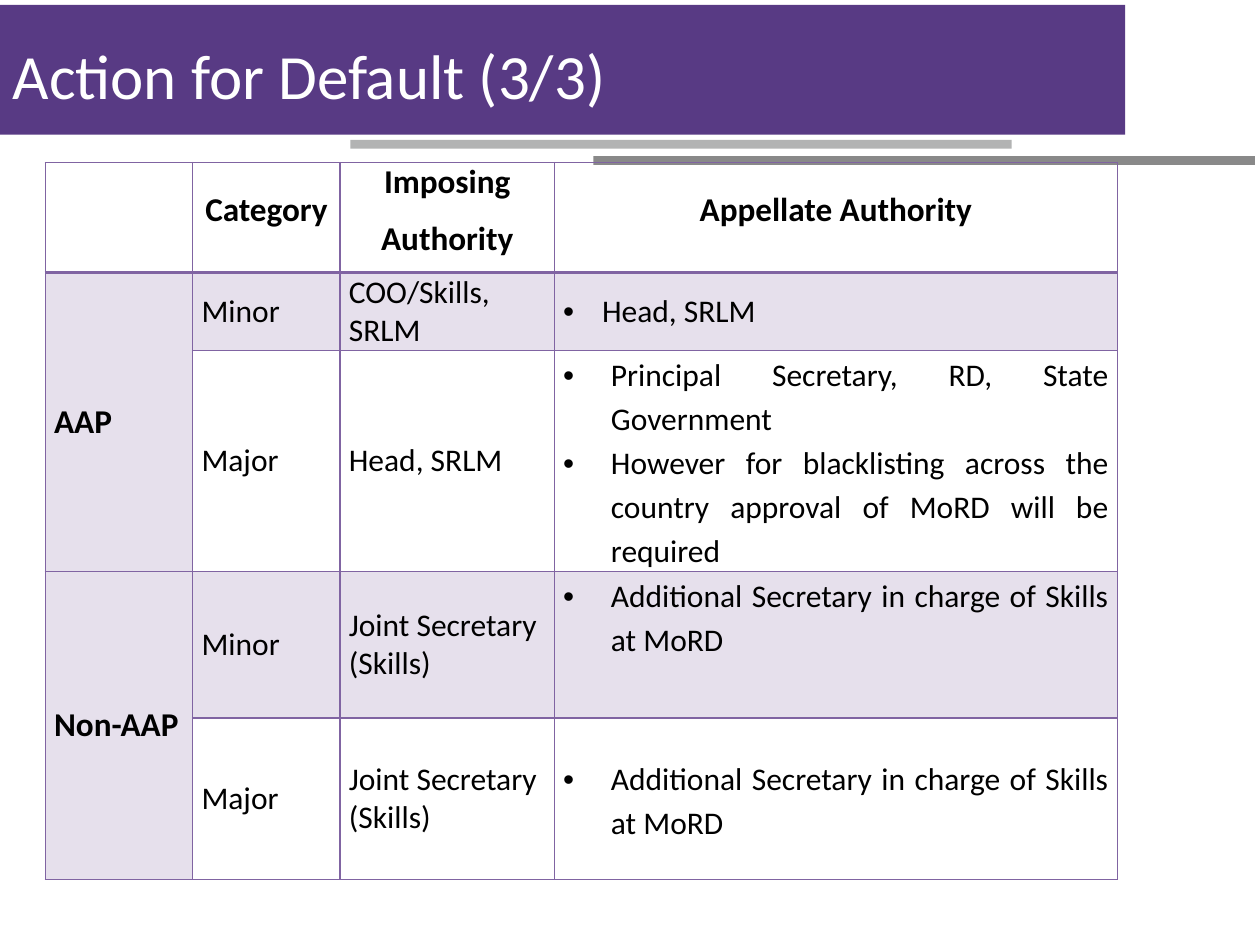
from dataclasses import dataclass

from lxml import etree
from pptx import Presentation
from pptx import util as u
from pptx.dml.color import RGBColor
from pptx.enum import shapes, text
from pptx.oxml import ns

PURPLE = RGBColor(0x58, 0x3A, 0x84)
DARK_GREY = RGBColor(0x89, 0x89, 0x89)
LIGHT_GREY = RGBColor(0xB2, 0xB3, 0xB3)
BORDER = RGBColor(0x80, 0x64, 0xA2)
TINT = RGBColor(0xE6, 0xE0, 0xEC)
WHITE = RGBColor(0xFF, 0xFF, 0xFF)
BLACK = RGBColor(0, 0, 0)
FONT = "Calibri"
SLIDE_WIDTH, SLIDE_HEIGHT = u.Inches(10), u.Inches(7.5)
ALIGN = text.PP_ALIGN
ANCHOR = text.MSO_ANCHOR


@dataclass(frozen=True)
class Box:
    """A rectangle in percent of the slide's width and height."""
    left: float
    top: float
    width: float
    height: float

    def lengths(self) -> tuple:
        return (across(self.left), down(self.top), across(self.width), down(self.height))


@dataclass(frozen=True)
class Bar:
    box: Box
    color: RGBColor


@dataclass(frozen=True)
class Style:
    size: int = 18
    bold: bool = False
    align: ALIGN = ALIGN.LEFT
    line_spacing: object = 1.0
    before: int = 0
    after: int = 0
    indent: float = 0
    anchor: ANCHOR = ANCHOR.MIDDLE


@dataclass(frozen=True)
class Entry:
    row: int
    column: int
    lines: tuple
    style: Style


def across(percent: float) -> int:
    return round(SLIDE_WIDTH * percent / 100)


def down(percent: float) -> int:
    return round(SLIDE_HEIGHT * percent / 100)


HEADER = Style(size=19, bold=True, align=ALIGN.CENTER, line_spacing=u.Pt(15), before=12, after=6)
GROUP = Style(size=19, bold=True)
PLAIN = Style()
SHORT_BULLET = Style(indent=0.31)
BULLET = Style(align=ALIGN.JUSTIFY, line_spacing=1.15, indent=0.38)
TOP_BULLET = Style(align=ALIGN.JUSTIFY, line_spacing=1.15, indent=0.38, anchor=ANCHOR.TOP)

BARS = (
    Bar(Box(0, 0.53, 89.3, 13.73), PURPLE),
    Bar(Box(47.1, 16.53, 52.5, 0.93), DARK_GREY),
    Bar(Box(27.8, 14.8, 52.5, 0.93), LIGHT_GREY),
)
TITLE_BOX = Box(0, 1.6, 90.1, 13.6)
TABLE_BOX = Box(3.6, 17.2, 85.1, 75.87)
COLUMN_WIDTHS = (11.7, 11.7, 17, 44.7)
ROW_HEIGHTS = (11.67, 8.2, 23.4, 15.53, 17.07)
TINTED_ROWS = (1, 3)
GROUP_ROWS = (1, 3)

JOINT = ("Joint Secretary (Skills)",)
ADDITIONAL = ("Additional Secretary in charge of Skills at MoRD",)
ENTRIES = (
    Entry(0, 1, ("Category",), HEADER),
    Entry(0, 2, ("Imposing", "Authority"), HEADER),
    Entry(0, 3, ("Appellate Authority",), HEADER),
    Entry(1, 0, ("AAP",), GROUP),
    Entry(1, 1, ("Minor",), PLAIN),
    Entry(1, 2, ("COO/Skills, SRLM",), PLAIN),
    Entry(1, 3, ("Head, SRLM",), SHORT_BULLET),
    Entry(2, 1, ("Major",), PLAIN),
    Entry(2, 2, ("Head, SRLM",), PLAIN),
    Entry(2, 3, ("Principal Secretary, RD, State Government",
                 "However for blacklisting across the country approval of MoRD will be required"),
          BULLET),
    Entry(3, 0, ("Non-AAP",), GROUP),
    Entry(3, 1, ("Minor",), PLAIN),
    Entry(3, 2, JOINT, PLAIN),
    Entry(3, 3, ADDITIONAL, TOP_BULLET),
    Entry(4, 1, ("Major",), PLAIN),
    Entry(4, 2, JOINT, PLAIN),
    Entry(4, 3, ADDITIONAL, BULLET),
)


def add_bar(slide, bar: Bar) -> None:
    shape = slide.shapes.add_shape(shapes.MSO_SHAPE.RECTANGLE, *bar.box.lengths())
    shape.shadow.inherit = False
    shape.fill.solid()
    shape.fill.fore_color.rgb = bar.color
    shape.line.fill.background()


def place_title(slide) -> None:
    """Format the title placeholder and bring it in front of the bars."""
    title = slide.shapes.title
    title.left, title.top, title.width, title.height = TITLE_BOX.lengths()
    frame = title.text_frame
    frame.text = "Action for Default (3/3)"
    frame.auto_size = text.MSO_AUTO_SIZE.NONE
    frame.vertical_anchor = ANCHOR.MIDDLE
    paragraph = frame.paragraphs[0]
    paragraph.alignment = ALIGN.LEFT
    paragraph.line_spacing = 0.9
    paragraph.font.name = FONT
    paragraph.font.size = u.Pt(36)
    paragraph.font.color.rgb = WHITE
    title.element.getparent().append(title.element)


def add_bullet(paragraph, indent: float) -> None:
    properties = paragraph._p.get_or_add_pPr()
    properties.set("marL", str(u.Inches(indent)))
    properties.set("indent", str(-u.Inches(indent)))
    etree.SubElement(properties, ns.qn("a:buFont"), typeface="Arial")
    etree.SubElement(properties, ns.qn("a:buChar"), char="•")


def set_borders(cell, bottom_width: int) -> None:
    properties = cell._tc.get_or_add_tcPr()
    widths = {"a:lnL": 1, "a:lnR": 1, "a:lnT": 1, "a:lnB": bottom_width}
    for position, (tag, width) in enumerate(widths.items()):
        line = etree.Element(ns.qn(tag), w=str(u.Pt(width)))
        fill = etree.SubElement(line, ns.qn("a:solidFill"))
        etree.SubElement(fill, ns.qn("a:srgbClr"), val=str(BORDER))
        properties.insert(position, line)


def write_entry(cell, entry: Entry) -> None:
    style = entry.style
    cell.vertical_anchor = style.anchor
    frame = cell.text_frame
    frame.text = "\n".join(entry.lines)
    for number, paragraph in enumerate(frame.paragraphs):
        if style.indent:
            add_bullet(paragraph, style.indent)
        paragraph.alignment = style.align
        paragraph.line_spacing = style.line_spacing
        paragraph.space_before = u.Pt(style.before if number else 0)
        paragraph.space_after = u.Pt(style.after)
        paragraph.font.name = FONT
        paragraph.font.size = u.Pt(style.size)
        paragraph.font.bold = style.bold
        paragraph.font.color.rgb = BLACK


def add_authority_table(slide) -> None:
    table = slide.shapes.add_table(len(ROW_HEIGHTS), len(COLUMN_WIDTHS), *TABLE_BOX.lengths()).table
    table.first_row = table.horz_banding = False
    for column, width in zip(table.columns, COLUMN_WIDTHS):
        column.width = across(width)
    for row_number, (row, height) in enumerate(zip(table.rows, ROW_HEIGHTS)):
        row.height = down(height)
        for column_number, cell in enumerate(row.cells):
            cell.margin_left = cell.margin_right = u.Inches(0.07)
            cell.margin_top = cell.margin_bottom = 0
            if row_number in TINTED_ROWS or (row_number and column_number == 0):
                cell.fill.solid()
                cell.fill.fore_color.rgb = TINT
            else:
                cell.fill.background()
            set_borders(cell, 1 if row_number else 2)
    for row_number in GROUP_ROWS:
        table.cell(row_number, 0).merge(table.cell(row_number + 1, 0))
    for entry in ENTRIES:
        write_entry(table.cell(entry.row, entry.column), entry)


def main() -> None:
    presentation = Presentation()
    presentation.slide_width, presentation.slide_height = SLIDE_WIDTH, SLIDE_HEIGHT
    slide = presentation.slides.add_slide(presentation.slide_layouts.get_by_name("Title Only"))
    for bar in BARS:
        add_bar(slide, bar)
    place_title(slide)
    add_authority_table(slide)
    presentation.save("out.pptx")


if __name__ == "__main__":
    main()
